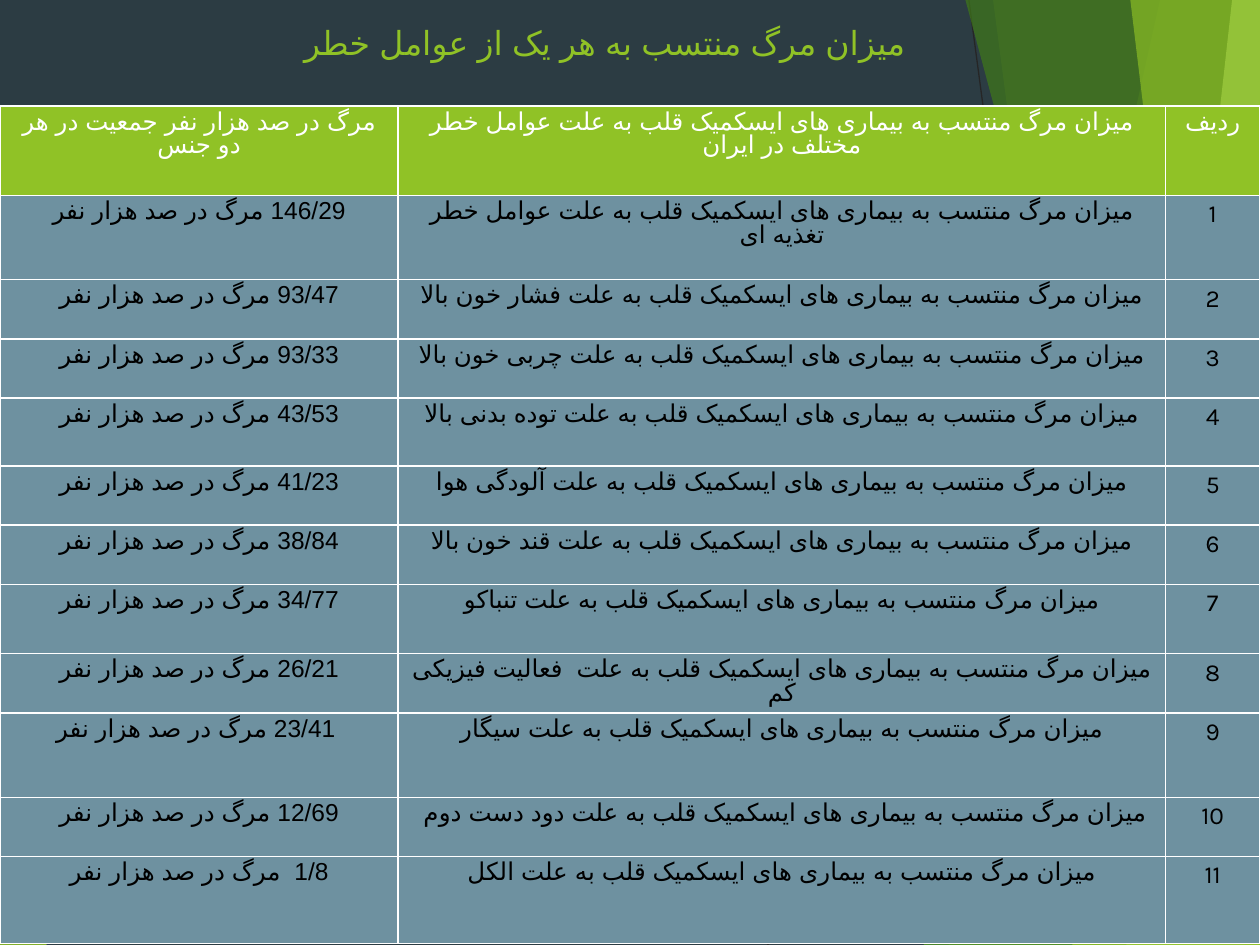
from lxml import etree
from pptx import Presentation
from pptx import util as u
from pptx.dml.color import RGBColor
from pptx.enum import lang, shapes, text
from pptx.oxml import ns

Inches, Pt = u.Inches, u.Pt
FONT, ARABIC_FONT = "Karla", "Arial"
COLORS = {
    "background": "2C3C43", "line": "262626", "lime": "90C226", "green": "54A021",
    "forest": "3F7819", "pale": "C0E474", "row": "6E91A0",
    "white": "FFFFFF", "black": "000000",
}


def paint(shape, color, percent):
    """Fill a shape with a partly transparent colour and no outline."""
    shape.shadow.inherit = False
    shape.line.fill.background()
    shape.fill.solid()
    shape.fill.fore_color.rgb = RGBColor.from_string(COLORS[color])
    srgb = shape.element.spPr.find(".//" + ns.qn("a:srgbClr"))
    etree.SubElement(srgb, ns.qn("a:alpha"), val=str(percent * 1000))


def style(para, size, color):
    """Centre a paragraph and format its run as Persian text."""
    para.alignment = text.PP_ALIGN.CENTER
    font = para.runs[0].font
    font.name, font.size, font.bold = FONT, Pt(size), False
    font.color.rgb = RGBColor.from_string(COLORS[color])
    font.language_id = lang.MSO_LANGUAGE_ID.FARSI
    etree.SubElement(font._element, ns.qn("a:cs"), typeface=ARABIC_FONT)


deck = Presentation()
deck.slide_width, deck.slide_height = Inches(10), Inches(7.5)
page = deck.slides.add_slide(deck.slide_layouts[5])
page.background.fill.solid()
page.background.fill.fore_color.rgb = RGBColor.from_string(COLORS["background"])

# Thin background lines
for ends in [(7.69, 0, 8.69, 7.5), (10, 4.03, 6.09, 7.5)]:
    line = page.shapes.add_connector(shapes.MSO_CONNECTOR.STRAIGHT,
                                     *[Inches(value) for value in ends])
    line.line.color.rgb = RGBColor.from_string(COLORS["line"])
    line.line.width = Pt(0.75)
    etree.SubElement(line.element.spPr, ns.qn("a:effectLst"))

# Facets: slanted bands (top x, bottom x) and corner triangles (box, apex)
facets = [
    ("band", (9.21, 7.53), "lime", 30),
    ("band", (7.88, 8.87), "lime", 20),
    ("triangle", (7.33, 3.33, 2.67, 4.17, 1), "green", 72),
    ("band", (7.66, 9.68), "forest", 70),
    ("band", (9.78, 8.94), "pale", 70),
    ("band", (8.97, 9.88), "lime", 65),
    ("triangle", (8.51, 3.93, 1.49, 3.57, 1), "lime", 80),
    ("triangle", (0, 4.39, 0.37, 3.11, 0), "lime", 85),
]
for kind, place, color, percent in facets:
    if kind == "band":
        top_x, bottom_x = place
        corners = [(Inches(x), Inches(y)) for x, y in
                   [(top_x, -0.01), (10, -0.01), (10, 7.5), (bottom_x, 7.5)]]
        builder = page.shapes.build_freeform(*corners[0])
        builder.add_line_segments(corners[1:], close=True)
        facet = builder.convert_to_shape()
    else:
        *box, apex = place
        facet = page.shapes.add_shape(shapes.MSO_SHAPE.ISOSCELES_TRIANGLE,
                                      *[Inches(value) for value in box])
        facet.adjustments[0] = apex
    paint(facet, color, percent)

# Title, raised above the facets
title = page.shapes.title
title.element.getparent().append(title.element)
title.left, title.top = Inches(-0.2), Inches(0.13)
title.width, title.height = Inches(10), Inches(0.39)
title.text_frame.text = "میزان مرگ منتسب به هر یک از عوامل خطر"
title.text_frame.vertical_anchor = text.MSO_ANCHOR.TOP
title.text_frame.auto_size = text.MSO_AUTO_SIZE.NONE
style(title.text_frame.paragraphs[0], 18.9, "lime")

# Table content: rate, risk factor, row number
CAUSE = "میزان مرگ منتسب به بیماری های ایسکمیک قلب به علت "
RATE = " مرگ در صد هزار نفر"
risks = [
    ("146/29", "عوامل خطر تغذیه ای"),
    ("93/47", "فشار خون بالا"),
    ("93/33", "چربی خون بالا"),
    ("43/53", "توده بدنی بالا"),
    ("41/23", "آلودگی هوا"),
    ("38/84", "قند خون بالا"),
    ("34/77", "تنباکو"),
    ("26/21", " فعالیت فیزیکی کم"),
    (" 23/41", "سیگار"),
    ("12/69", "دود دست دوم "),
    ("1/8 ", "الکل"),
]
rows = [("مرگ در صد هزار نفر جمعیت در هر دو جنس",
         CAUSE + "عوامل خطر مختلف در ایران", "ردیف")]
rows += [(rate + RATE, CAUSE + risk, str(number))
         for number, (rate, risk) in enumerate(risks, 1)]
widths = [3.16, 6.09, 0.75]
heights = [0.71, 0.67, 0.47, 0.47, 0.54, 0.47, 0.47, 0.55, 0.47, 0.67, 0.47, 0.69]

# Table; its style draws the white grid
table = page.shapes.add_table(len(rows), len(widths), Inches(0), Inches(0.84),
                              Inches(10), Inches(6.66)).table
table.horz_banding = False
for column, width in zip(table.columns, widths):
    column.width = Inches(width)
for row, height in zip(table.rows, heights):
    row.height = Inches(height)

for r, values in enumerate(rows):
    header = r == 0
    for c, value in enumerate(values):
        cell = table.cell(r, c)
        cell.margin_left = cell.margin_right = Inches(0.07)
        cell.margin_top = cell.margin_bottom = Inches(0.04)
        cell.fill.solid()
        cell.fill.fore_color.rgb = RGBColor.from_string(
            COLORS["lime" if header else "row"])
        cell.text_frame.text = value
        para = cell.text_frame.paragraphs[0]
        if c < 2:
            para._p.get_or_add_pPr().set("rtl", "1")
        para.line_spacing = 0.87 if header or c < 2 else 1.0
        style(para, 14, "white" if header else "black")

deck.save("out.pptx")
